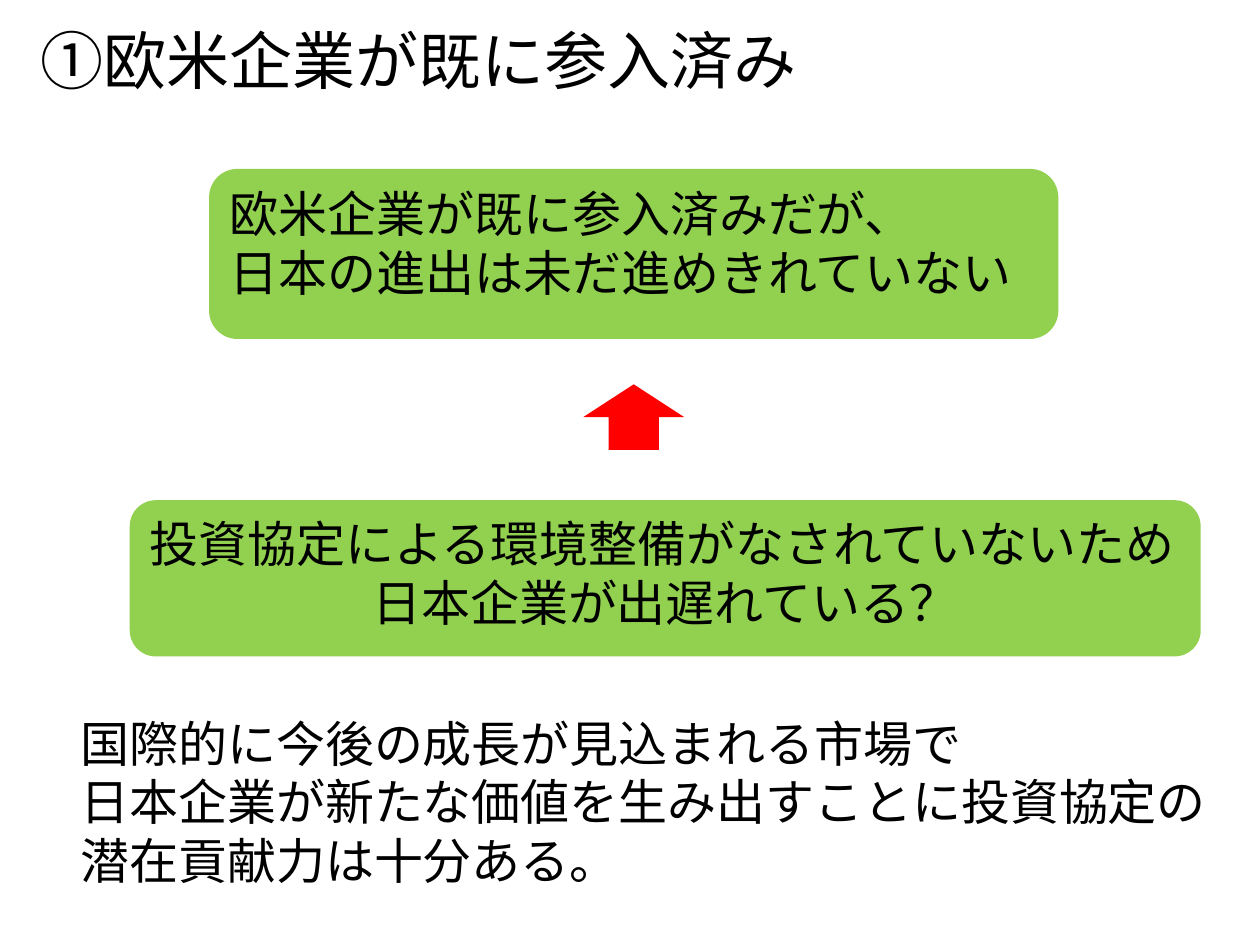
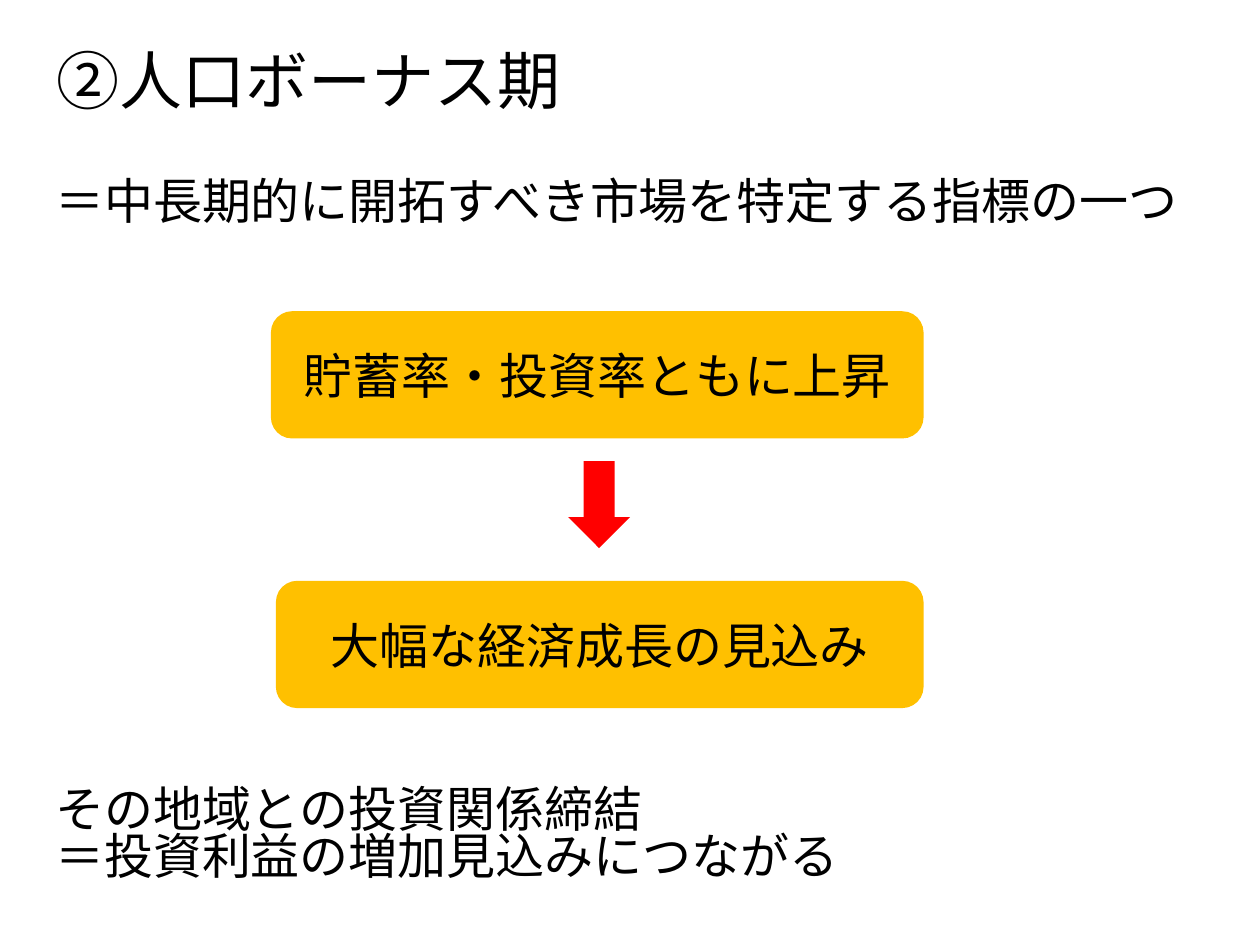
"""Build two slides on market entry and the population bonus."""
from dataclasses import dataclass

from pptx import Presentation
from pptx.dml.color import RGBColor
from pptx.enum.shapes import MSO_SHAPE as Form
from pptx.enum.text import MSO_ANCHOR as Anchor, MSO_AUTO_SIZE as Fit, PP_ALIGN as Align
from pptx.slide import Slide
from pptx.text.text import TextFrame
from pptx.util import Emu, Pt

PX = 9144
BLACK = RGBColor(0x00, 0x00, 0x00)
GREEN = RGBColor(0x92, 0xD0, 0x50)
AMBER = RGBColor(0xFF, 0xC0, 0x00)
RED = RGBColor(0xFF, 0x00, 0x00)
LATIN = "Calibri"
NOTO = "Noto Sans CJK JP"
ARIAL = "Arial"


@dataclass(frozen=True)
class Box:
    """Hold a place in px."""
    left: int
    top: int
    width: int
    height: int

    def emu(self) -> tuple[Emu, ...]:
        """Give the place in EMU."""
        return tuple(Emu(n * PX) for n in (self.left, self.top, self.width, self.height))


@dataclass(frozen=True)
class Line:
    """Hold one paragraph of text."""
    text: str
    font: str = LATIN
    size: int = 28
    align: Align = Align.LEFT
    space: float = 1.0
    before: int = 0


@dataclass(frozen=True)
class Card:
    """Hold a filled shape and its text."""
    form: Form
    box: Box
    fill: RGBColor
    lines: tuple[Line, ...] = ()
    anchor: Anchor = Anchor.TOP


def write(frame: TextFrame, lines: tuple[Line, ...], anchor: Anchor = Anchor.TOP,
          inset: int = 5) -> None:
    """Fill a frame with lines."""
    frame.word_wrap = True
    frame.auto_size = Fit.NONE
    frame.vertical_anchor = anchor
    frame.margin_left = frame.margin_right = Emu(10 * PX)
    frame.margin_top = frame.margin_bottom = Emu(inset * PX)
    for i, line in enumerate(lines):
        para = frame.add_paragraph() if i else frame.paragraphs[0]
        para.alignment = line.align
        para.line_spacing = line.space
        if line.before:
            para.space_before = Pt(line.before)
        run = para.add_run()
        run.text = line.text
        run.font.name = line.font
        run.font.size = Pt(line.size)
        run.font.color.rgb = BLACK


def head(slide: Slide, box: Box, text: str, font: str = LATIN) -> None:
    """Place and write the title."""
    title = slide.shapes.title
    title.left, title.top, title.width, title.height = box.emu()
    write(title.text_frame, (Line(text, font, 36, space=0.9),), inset=10)


def note(slide: Slide, box: Box, lines: tuple[Line, ...], inset: int = 5) -> None:
    """Add plain text."""
    write(slide.shapes.add_textbox(*box.emu()).text_frame, lines, inset=inset)


def draw(slide: Slide, card: Card) -> None:
    """Add a filled shape."""
    shape = slide.shapes.add_shape(card.form, *card.box.emu())
    shape.shadow.inherit = False
    shape.fill.solid()
    shape.fill.fore_color.rgb = card.fill
    shape.line.fill.background()
    if card.lines:
        write(shape.text_frame, card.lines, card.anchor)


def amber(box: Box, text: str) -> Card:
    """Make a centred amber card."""
    return Card(Form.ROUNDED_RECTANGLE, box, AMBER,
                (Line(text, align=Align.CENTER),), Anchor.MIDDLE)


def entry(slide: Slide) -> None:
    """Draw the market entry slide."""
    head(slide, Box(22, 14, 932, 83), "①欧米企業が既に参入済み", NOTO)
    note(slide, Box(54, 561, 951, 151), (
        Line("国際的に今後の成長が見込まれる市場で"),
        Line("日本企業が新たな価値を生み出すことに投資協定の潜在貢献力は十分ある。")))
    cards = (
        Card(Form.ROUNDED_RECTANGLE, Box(166, 134, 674, 135), GREEN, (
            Line("欧米企業が既に参入済みだが、"),
            Line("日本の進出は未だ進めきれていない"))),
        Card(Form.ROUNDED_RECTANGLE, Box(103, 397, 850, 124), GREEN, (
            Line("投資協定による環境整備がなされていないため"),
            Line("日本企業が出遅れている？", align=Align.CENTER))),
        Card(Form.UP_ARROW, Box(463, 305, 80, 52), RED))
    for card in cards:
        draw(slide, card)


def bonus(slide: Slide) -> None:
    """Draw the population bonus slide."""
    head(slide, Box(35, 30, 932, 83), "②人口ボーナス期")
    note(slide, Box(34, 134, 932, 604), (
        Line("＝中長期的に開拓すべき市場を特定する指標の一つ", space=0.8),
        Line("その地域との投資関係締結", ARIAL, space=0.8, before=321),
        Line("＝投資利益の増加見込みにつながる", ARIAL, space=0.8)), 10)
    cards = (
        amber(Box(215, 247, 518, 101), "貯蓄率・投資率ともに上昇"),
        amber(Box(219, 461, 514, 101), "大幅な経済成長の見込み"),
        Card(Form.DOWN_ARROW, Box(451, 366, 49, 69), RED))
    for card in cards:
        draw(slide, card)


def main() -> None:
    """Build and save the deck."""
    deck = Presentation()
    deck.slide_width, deck.slide_height = Emu(1000 * PX), Emu(750 * PX)
    for build in (entry, bonus):
        build(deck.slides.add_slide(deck.slide_layouts[5]))
    deck.save("out.pptx")


if __name__ == "__main__":
    main()
